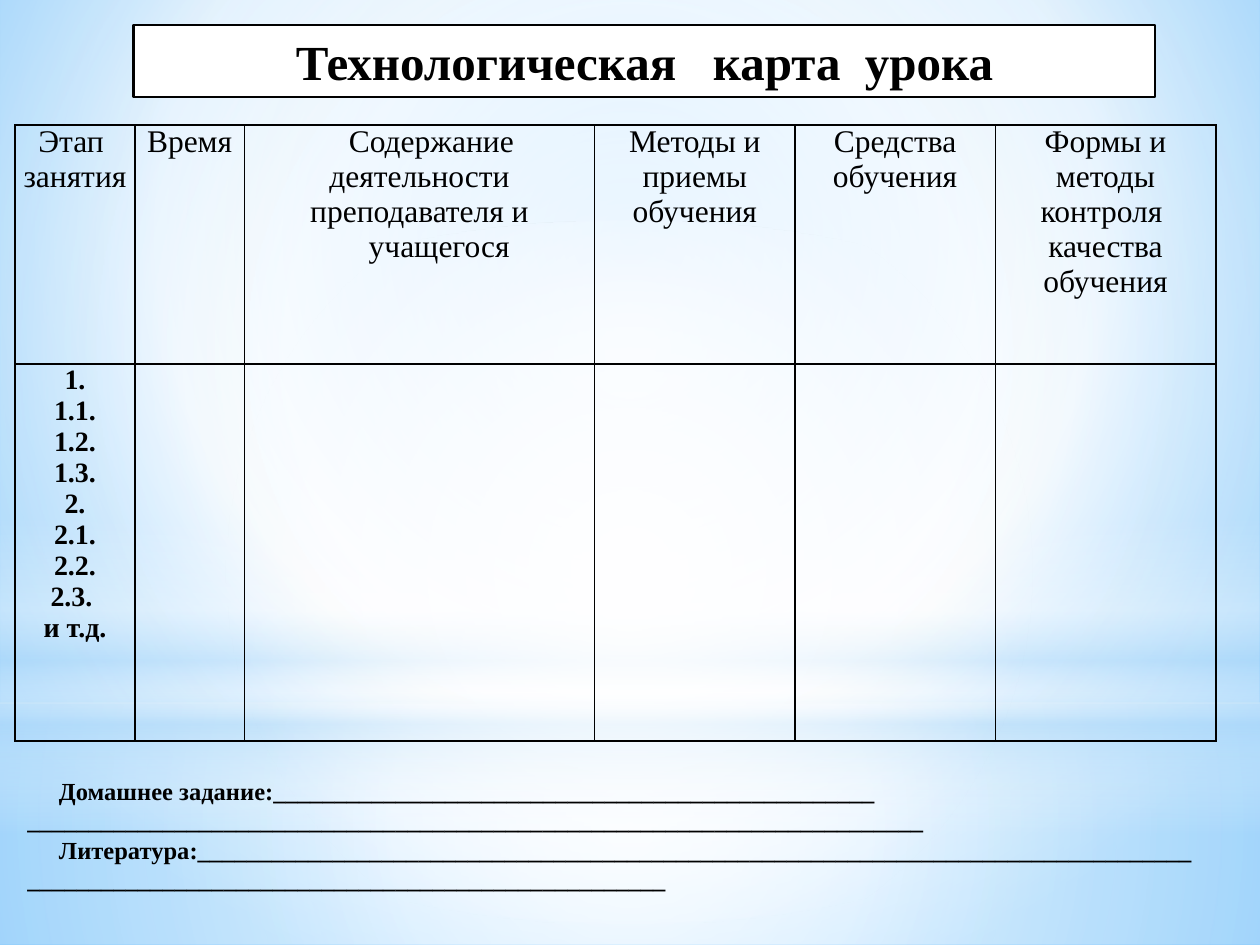
"""Builds the lesson plan slide: title, stage table and homework lines."""
from dataclasses import dataclass

from lxml import etree
from pptx import Presentation
from pptx.dml.color import RGBColor
from pptx.enum.shapes import MSO_SHAPE
from pptx.enum.text import MSO_ANCHOR, MSO_AUTO_SIZE, PP_ALIGN
from pptx.oxml.ns import qn
from pptx.util import Inches, Pt

RECTANGLE, OVAL = MSO_SHAPE.RECTANGLE, MSO_SHAPE.OVAL
CENTER, LEFT = PP_ALIGN.CENTER, PP_ALIGN.LEFT
MIDDLE, TOP = MSO_ANCHOR.MIDDLE, MSO_ANCHOR.TOP
FIT_SHAPE = MSO_AUTO_SIZE.SHAPE_TO_FIT_TEXT

FONT = "Times New Roman"
COLORS = {"ink": "000000", "white": "FFFFFF", "sky": "9ED5FF",
          "azure": "5BB9FF", "mist": "B4DCFA"}
INDENT = 0.25
BORDER_SIDES = ("a:lnL", "a:lnR", "a:lnT", "a:lnB")


@dataclass
class Gradient:
    """Stops of position, colour and opacity, with a circle focus or an angle."""
    stops: tuple
    focus: tuple = (50, 50, 50, 50)
    angle: int | None = None


@dataclass
class Glow:
    """A translucent backdrop area."""
    box: tuple
    gradient: Gradient
    outline: int = RECTANGLE


@dataclass
class Column:
    """A table column with its heading paragraphs."""
    width: float
    heading: tuple
    indent: float = 0


BACKDROP = Gradient(((0, "sky", 100), (60, "white", 100), (100, "azure", 100)),
                    focus=(20, 10, 20, 60))
GLOWS = (
    Glow((0, 5.58, 10, 1.92),
         Gradient(((0, "white", 91), (37, "white", 76), (100, "mist", 79)))),
    Glow((0, 0, 10, 5.58),
         Gradient(((0, "white", 89), (48, "white", 62), (100, "mist", 79)))),
    Glow((0, 4.12, 10, 2.5),
         Gradient(((0, "white", 0), (29, "white", 30), (45, "mist", 40),
                   (55, "white", 26), (65, "mist", 60), (100, "white", 0)), angle=90)),
    Glow((0, 1.75, 10, 5.58),
         Gradient(((0, "white", 100), (56, "white", 0))), OVAL),
)
COLUMNS = (
    Column(0.95, ("Этап  занятия",)),
    Column(0.87, ("Время",)),
    Column(2.78, ("Содержание  деятельности преподавателя и", " учащегося"), INDENT),
    Column(1.59, ("Методы и приемы обучения",)),
    Column(1.59, ("Средства обучения",)),
    Column(1.75, ("Формы и методы контроля  качества обучения",)),
)
ROW_HEIGHTS = (1.9, 2.99)
STAGES = ("1.", "1.1.", "1.2.", "1.3.", "2.", "2.1.", "2.2.", "2.3. ", "и т.д.")
ASSIGNMENTS = ("Домашнее задание:" + "_" * 49 + " " + "_" * 73,
               "Литература:" + "_" * 133)


def rgb(name: str) -> RGBColor:
    """Look up a named colour."""
    return RGBColor.from_string(COLORS[name])


def add_color(parent, name: str, opacity: int = 100) -> None:
    """Append a colour element with its opacity."""
    color = etree.SubElement(parent, qn("a:srgbClr"), val=COLORS[name])
    if opacity < 100:
        etree.SubElement(color, qn("a:alpha"), val=str(opacity * 1000))


def apply_gradient(fill, owner, gradient: Gradient) -> None:
    """Fill a shape or background with a circular or linear gradient."""
    fill.gradient()
    grad = next(owner.iter(qn("a:gradFill")))
    for child in list(grad):
        grad.remove(child)
    stops = etree.SubElement(grad, qn("a:gsLst"))
    for position, name, opacity in gradient.stops:
        stop = etree.SubElement(stops, qn("a:gs"), pos=str(position * 1000))
        add_color(stop, name, opacity)
    if gradient.angle is not None:
        etree.SubElement(grad, qn("a:lin"), ang=str(gradient.angle * 60000), scaled="0")
        return
    circle = etree.SubElement(grad, qn("a:path"), path="circle")
    edges = {side: str(share * 1000) for side, share in zip("ltrb", gradient.focus)}
    etree.SubElement(circle, qn("a:fillToRect"), **edges)


def write(frame, paragraphs: tuple, *, size: int, bold: bool = False,
          align: int = CENTER, indent: float = 0) -> None:
    """Write paragraphs in one format."""
    frame.word_wrap = True
    for index, text in enumerate(paragraphs):
        paragraph = frame.add_paragraph() if index else frame.paragraphs[0]
        paragraph.alignment = align
        if indent:
            properties = paragraph._p.get_or_add_pPr()
            properties.set("marL", "0")
            properties.set("indent", str(Inches(indent)))
        run = paragraph.add_run()
        run.text = text
        run.font.name, run.font.size, run.font.bold = FONT, Pt(size), bold
        run.font.color.rgb = rgb("ink")


def draw_glow(slide, glow: Glow) -> None:
    """Draw one backdrop area."""
    area = slide.shapes.add_shape(glow.outline, *map(Inches, glow.box))
    area.shadow.inherit = False
    area.line.fill.background()
    apply_gradient(area.fill, area.element, glow.gradient)


def draw_title(slide) -> None:
    """Draw the framed title."""
    title = slide.shapes.add_shape(RECTANGLE, *map(Inches, (1.06, 0.2, 8.11, 0.57)))
    title.shadow.inherit = False
    title.fill.solid()
    title.fill.fore_color.rgb = rgb("white")
    title.line.color.rgb = rgb("ink")
    title.line.width = Pt(1.25)
    title.text_frame.vertical_anchor = MIDDLE
    title.text_frame.auto_size = FIT_SHAPE
    write(title.text_frame, ("Технологическая   карта  урока",), size=28, bold=True)


def style_cell(cell) -> None:
    """Give a cell thin black borders, narrow margins and no fill."""
    properties = cell._tc.get_or_add_tcPr()
    for side in BORDER_SIDES:
        border = etree.SubElement(properties, qn(side), w=str(Pt(1)))
        add_color(etree.SubElement(border, qn("a:solidFill")), "ink")
    cell.fill.background()
    cell.margin_left = cell.margin_right = Inches(0.06)
    cell.margin_top = cell.margin_bottom = 0
    cell.vertical_anchor = TOP


def draw_plan(slide) -> None:
    """Draw the lesson stage table."""
    width = sum(column.width for column in COLUMNS)
    plan = slide.shapes.add_table(len(ROW_HEIGHTS), len(COLUMNS), Inches(0.12), Inches(0.99),
                                  Inches(width), Inches(sum(ROW_HEIGHTS))).table
    plan.first_row = plan.horz_banding = False
    for row, height in zip(plan.rows, ROW_HEIGHTS):
        row.height = Inches(height)
    for cell in plan.iter_cells():
        style_cell(cell)
    for index, column in enumerate(COLUMNS):
        plan.columns[index].width = Inches(column.width)
        write(plan.cell(0, index).text_frame, column.heading, size=18, indent=column.indent)
    write(plan.cell(1, 0).text_frame, STAGES, size=16, bold=True)


def draw_assignments(slide) -> None:
    """Draw the homework and reading lines."""
    frame = slide.shapes.add_textbox(*map(Inches, (0.12, 6.11, 9.53, 1.04))).text_frame
    frame.auto_size = FIT_SHAPE
    write(frame, ASSIGNMENTS, size=14, bold=True, align=LEFT, indent=INDENT)


def main() -> None:
    """Build and save the slide."""
    deck = Presentation()
    deck.slide_width, deck.slide_height = Inches(10), Inches(7.5)
    slide = deck.slides.add_slide(deck.slide_layouts[6])
    apply_gradient(slide.background.fill, slide.element, BACKDROP)
    for glow in GLOWS:
        draw_glow(slide, glow)
    draw_title(slide)
    draw_plan(slide)
    draw_assignments(slide)
    deck.save("out.pptx")


if __name__ == "__main__":
    main()
